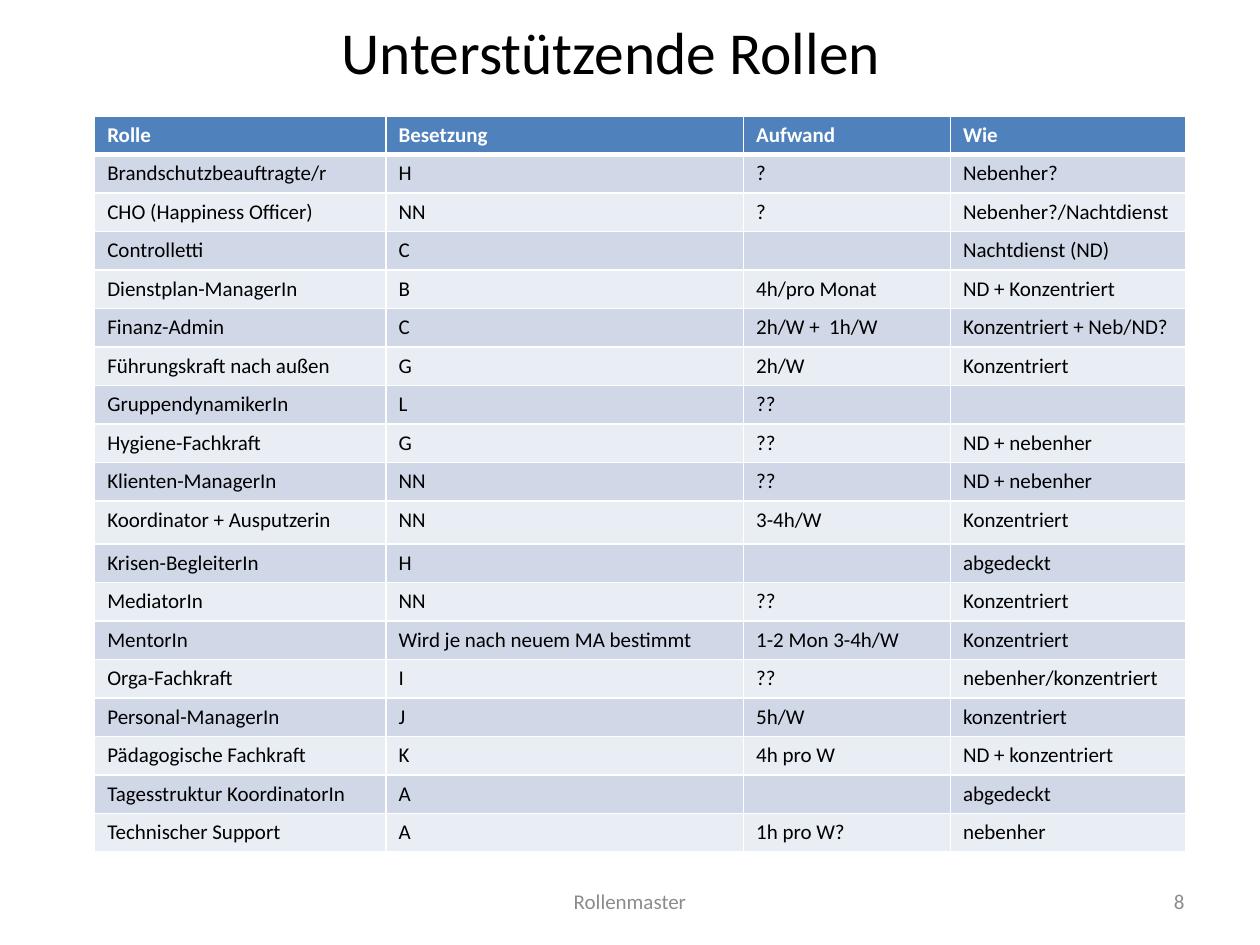
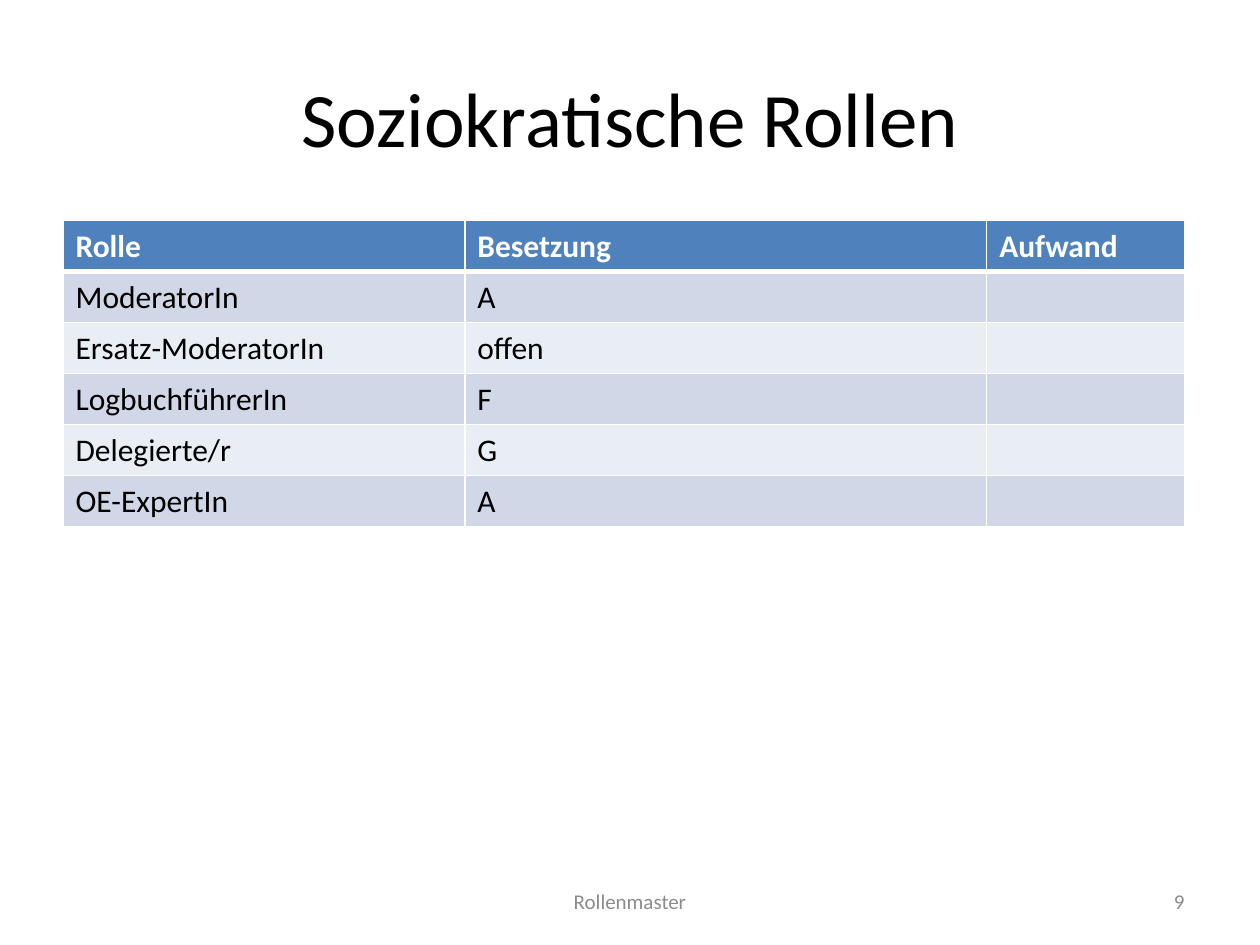
from dataclasses import dataclass

from lxml.etree import SubElement
from pptx import Presentation
from pptx.dml.color import RGBColor as Rgb
from pptx.enum.text import MSO_ANCHOR as Anchor, MSO_AUTO_SIZE as AutoSize, PP_ALIGN as Align
from pptx.oxml.ns import qn
from pptx.util import Cm, Pt


@dataclass(frozen=True)
class Theme:
    font: str = "Calibri"
    text: str = "000000"
    white: str = "FFFFFF"
    muted: str = "8C8C8C"
    header: str = "4F81BD"
    bands: tuple = ("D0D8E8", "E9EDF4")
    title_size: int = 44
    compact_title_size: int = 34
    table_size: int = 18
    compact_table_size: int = 12
    footer_size: int = 12
    rule: int = 1
    header_rule: int = 3


THEME = Theme()
FOOTER = "Rollenmaster"

SUPPORT_ROLES = [
    ("Rolle", "Besetzung", "Aufwand", "Wie"),
    ("Brandschutzbeauftragte/r", "H", "?", "Nebenher?"),
    ("CHO (Happiness Officer)", "NN", "?", "Nebenher?/Nachtdienst"),
    ("Controlletti", "C", "", "Nachtdienst (ND)"),
    ("Dienstplan-ManagerIn", "B", "4h/pro Monat", "ND + Konzentriert"),
    ("Finanz-Admin", "C", "2h/W +  1h/W", "Konzentriert + Neb/ND?"),
    ("Führungskraft nach außen", "G", "2h/W", "Konzentriert"),
    ("GruppendynamikerIn", "L", "??", ""),
    ("Hygiene-Fachkraft", "G", "??", "ND + nebenher"),
    ("Klienten-ManagerIn", "NN", "??", "ND + nebenher"),
    ("Koordinator + Ausputzerin", "NN", "3-4h/W", "Konzentriert"),
    ("Krisen-BegleiterIn", "H", "", "abgedeckt"),
    ("MediatorIn", "NN", "??", "Konzentriert"),
    ("MentorIn", "Wird je nach neuem MA bestimmt", "1-2 Mon 3-4h/W", "Konzentriert"),
    ("Orga-Fachkraft", "I", "??", "nebenher/konzentriert"),
    ("Personal-ManagerIn", "J", "5h/W", "konzentriert"),
    ("Pädagogische Fachkraft", "K", "4h pro W", "ND + konzentriert"),
    ("Tagesstruktur KoordinatorIn", "A", "", "abgedeckt"),
    ("Technischer Support", "A", "1h pro W?", "nebenher"),
]

SOCIOCRATIC_ROLES = [
    ("Rolle", "Besetzung", "Aufwand"),
    ("ModeratorIn", "A", ""),
    ("Ersatz-ModeratorIn", "offen", ""),
    ("LogbuchführerIn", "F", ""),
    ("Delegierte/r", "G", ""),
    ("OE-ExpertIn", "A", ""),
]


def style_paragraph(para, size, color, align=Align.LEFT, bold=False):
    para.alignment = align
    para.font.name = THEME.font
    para.font.size = Pt(size)
    para.font.bold = bold
    para.font.color.rgb = Rgb.from_string(color)


def place(shape, left, top, width, height):
    shape.left, shape.top = Cm(left), Cm(top)
    shape.width, shape.height = Cm(width), Cm(height)


# Titles and footers
def set_title(page, text, area, size):
    title = page.shapes.title
    place(title, *area)
    frame = title.text_frame
    frame.text = text
    frame.auto_size = AutoSize.NONE
    frame.vertical_anchor = Anchor.MIDDLE
    style_paragraph(frame.paragraphs[0], size, THEME.text, Align.CENTER)


def add_footer_text(page, text, left, width, align):
    box = page.shapes.add_textbox(Cm(left), Cm(17.65), Cm(width), Cm(1.02))
    frame = box.text_frame
    frame.word_wrap = True
    frame.vertical_anchor = Anchor.MIDDLE
    frame.text = text
    style_paragraph(frame.paragraphs[0], THEME.footer_size, THEME.muted, align)


def add_page(deck, number, title, title_area, title_size):
    page = deck.slides.add_slide(deck.slide_layouts[5])
    set_title(page, title, title_area, title_size)
    add_footer_text(page, str(number), 18.2, 5.93, Align.RIGHT)
    add_footer_text(page, FOOTER, 8.68, 8.04, Align.CENTER)
    return page


# Tables
def set_borders(cell, row_index):
    properties = cell._tc.get_or_add_tcPr()
    heavy_side = {0: "lnB", 1: "lnT"}.get(row_index)
    for side in ("lnL", "lnR", "lnT", "lnB"):
        points = THEME.header_rule if side == heavy_side else THEME.rule
        line = SubElement(properties, qn(f"a:{side}"), w=str(Pt(points)))
        fill = SubElement(line, qn("a:solidFill"))
        SubElement(fill, qn("a:srgbClr"), val=THEME.white)


def fill_cell(cell, text, row_index, size):
    is_header = row_index == 0
    background = THEME.header if is_header else THEME.bands[(row_index - 1) % 2]
    set_borders(cell, row_index)
    cell.fill.solid()
    cell.fill.fore_color.rgb = Rgb.from_string(background)
    cell.text = text
    color = THEME.white if is_header else THEME.text
    style_paragraph(cell.text_frame.paragraphs[0], size, color, bold=is_header)


def add_role_table(page, rows, left, top, widths, height, size, tall_rows=None):
    """Share the height equally among the rows that have no height of their own."""
    tall_rows = tall_rows or {}
    row_height = (height - sum(tall_rows.values())) / (len(rows) - len(tall_rows))
    table = page.shapes.add_table(
        len(rows), len(widths), Cm(left), Cm(top), Cm(sum(widths)), Cm(height)
    ).table
    for column, width in zip(table.columns, widths):
        column.width = Cm(width)
    for row_index, values in enumerate(rows):
        table.rows[row_index].height = Cm(tall_rows.get(row_index, row_height))
        for column_index, text in enumerate(values):
            fill_cell(table.cell(row_index, column_index), text, row_index, size)


def main():
    deck = Presentation()
    deck.slide_width, deck.slide_height = Cm(25.4), Cm(19.05)

    # Supporting roles
    page = add_page(deck, 8, "Unterstützende Rollen", (0.89, 0.33, 22.86, 1.4),
                    THEME.compact_title_size)
    add_role_table(page, SUPPORT_ROLES, 1.91, 2.34, (5.87, 7.21, 4.17, 4.75), 14.84,
                   THEME.compact_table_size, tall_rows={10: 0.87})

    # Sociocratic roles
    page = add_page(deck, 9, "Soziokratische Rollen", (1.27, 0.76, 22.86, 3.18),
                    THEME.title_size)
    add_role_table(page, SOCIOCRATIC_ROLES, 1.27, 4.45, (8.1, 10.52, 3.99), 6.17,
                   THEME.table_size)

    deck.save("out.pptx")


if __name__ == "__main__":
    main()
